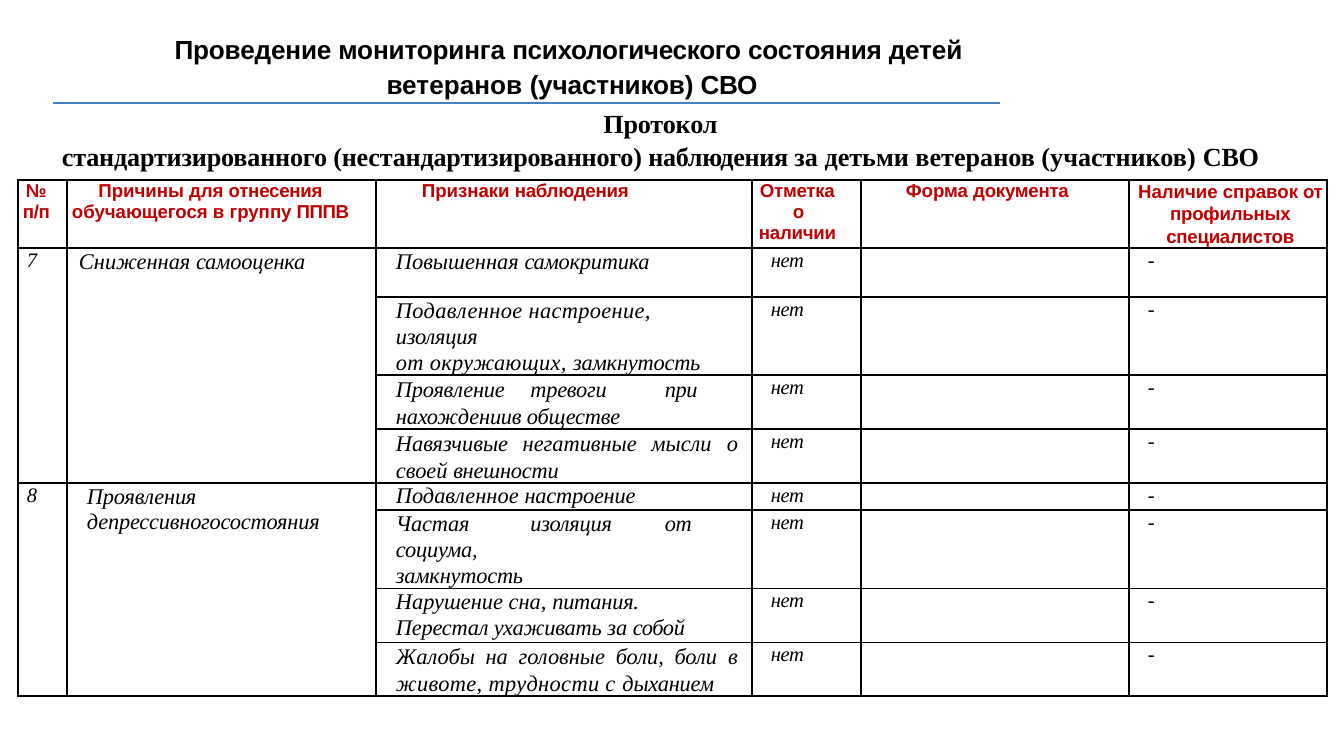
from dataclasses import dataclass
from itertools import accumulate
from typing import NamedTuple

from lxml.etree import SubElement
from pptx import Presentation
from pptx.dml.color import RGBColor
from pptx.enum.shapes import MSO_CONNECTOR
from pptx.enum.text import MSO_ANCHOR, MSO_AUTO_SIZE, PP_ALIGN
from pptx.oxml.ns import qn
from pptx.util import Emu, Pt

COLORS = {"text": "000000", "header": "C00000", "rule": "4480C2", "border": "000000"}
CENTER, JUSTIFY = PP_ALIGN.CENTER, PP_ALIGN.JUSTIFY


class Style(NamedTuple):
    font: str
    size: int
    color: str
    bold: bool = False
    italic: bool = False


TITLE = Style("Arial", 14, "text", bold=True)
SUBTITLE = Style("Times New Roman", 14, "text", bold=True)
HEADER = Style("Arial", 10, "header", bold=True)
REASON = Style("Times New Roman", 12, "text", italic=True)
MARK = Style("Times New Roman", 11, "text", italic=True)


@dataclass
class Para:
    """Runs are (text, letter spacing in points); indents and tabs are px."""
    runs: list[tuple[str, float]]
    style: Style
    left: int = 0
    first: int = 0
    right: int = 0
    line: float | None = None
    before: float = 0
    align: PP_ALIGN | None = None
    tabs: tuple[int, ...] = ()


def px(value: int) -> Emu:
    return Emu(round(value * 914400 / 134.4))


def rgb(name: str) -> RGBColor:
    return RGBColor.from_string(COLORS[name])


def write(frame, paras: list[Para]) -> None:
    for number, para in enumerate(paras):
        target = frame.add_paragraph() if number else frame.paragraphs[0]
        target.alignment = para.align
        target.space_before = Pt(para.before)
        if para.line:
            target.line_spacing = Pt(para.line)
        properties = target._p.get_or_add_pPr()
        for key, value in (("marL", para.left), ("marR", para.right), ("indent", para.first)):
            properties.set(key, str(px(value)))
        if para.tabs:
            stops = SubElement(properties, qn("a:tabLst"))
            for stop in para.tabs:
                SubElement(stops, qn("a:tab"), pos=str(px(stop)), algn="l")
        for text, spacing in para.runs:
            run = target.add_run()
            run.text = text
            font = run.font
            font.name, font.size = para.style.font, Pt(para.style.size)
            font.bold, font.italic = para.style.bold, para.style.italic
            font.color.rgb = rgb(para.style.color)
            run._r.get_or_add_rPr().set("spc", str(round(spacing * 100)))


def write_box(shape, box: tuple[int, int, int, int], paras: list[Para]) -> None:
    shape.left, shape.top, shape.width, shape.height = map(px, box)
    frame = shape.text_frame
    frame.word_wrap, frame.auto_size = True, MSO_AUTO_SIZE.NONE
    frame.vertical_anchor = MSO_ANCHOR.TOP
    frame.margin_left = frame.margin_right = frame.margin_bottom = 0
    frame.margin_top = px(1)
    write(frame, paras)


def format_cell(cell) -> None:
    cell.margin_left = cell.margin_right = cell.margin_top = cell.margin_bottom = 0
    properties = cell._tc.get_or_add_tcPr()
    for side in ("lnL", "lnR", "lnT", "lnB"):
        edge = SubElement(properties, qn(f"a:{side}"), w=str(Pt(1)))
        fill = SubElement(edge, qn("a:solidFill"))
        SubElement(fill, qn("a:srgbClr"), val=COLORS["border"])
    cell.fill.background()
    # Keeps cells without text from stretching their row
    if not cell.text_frame.text:
        SubElement(cell.text_frame.paragraphs[0]._p, qn("a:endParaRPr"), sz="1000")


def sign(runs: list[tuple[str, float]], line: float = 14.1, **options) -> Para:
    return Para(runs, REASON, left=20, right=15, line=line, **options)


def mark(text: str, left: int = 19) -> Para:
    return Para([(text, -0.2)], MARK, left=left, line=12.9)


# Table content
HEADERS = [
    [Para([("№", -0.5)], HEADER, left=8, line=11.8), Para([("п/п", -0.2)], HEADER, left=5)],
    [Para([("Причины для ", 0), ("отнесения", -0.1)], HEADER, right=22, line=11.8, align=CENTER),
     Para([("обучающегося в группу ", 0), ("ПППВ", -0.2)], HEADER, right=22, align=CENTER)],
    [Para([("Признаки ", 0), ("наблюдения", -0.1)], HEADER, left=46, line=11.8)],
    [Para([("Отметка", -0.1)], HEADER, left=8, line=11.8),
     Para([("о ", -0.5), ("наличии", -0.1)], HEADER, left=7, first=34)],
    [Para([("Форма ", 0), ("документа", -0.1)], HEADER, left=45, line=11.8)],
    [Para([("Наличие справок ", 0), ("от ", -0.2), ("профильных специалистов", -0.1)],
          HEADER, left=5, line=12, align=CENTER)],
]
REASONS = [
    ("7", [Para([("Сниженная ", 0), ("самооценка", -0.1)], REASON, left=12, line=14.1)]),
    ("8", [Para([("Проявления", -0.1)], REASON, left=20, line=14.1),
           Para([("депрессивногосостояния", -0.1)], REASON, left=20)]),
]
SIGNS = [
    [sign([("Повышенная ", 0), ("самокритика", -0.1)])],
    [sign([("Подавленное настроение, ", 0.2), ("изоляция", -0.1)]),
     sign([("от окружающих, ", 0.2), ("замкнутость", -0.1)], 13.7)],
    [sign([("Проявление\tтревоги\t", -0.1), ("при ", -0.2), ("нахождениив обществе", -0.1)],
          14.4, tabs=(192, 332))],
    [sign([("Навязчивые негативные мысли ", 0), ("о ", -0.5), ("своей ", 0),
           ("внешности", -0.1)], 14.4, align=JUSTIFY)],
    [sign([("Подавленное ", 0), ("настроение", -0.1)], 13.8)],
    [sign([("Частая\tизоляция\t", -0.1), ("от\t", -0.2), ("социума,", -0.1)],
          tabs=(120, 228, 281)),
     sign([("замкнутость", -0.1)], 13.7)],
    [sign([("Нарушение сна, ", 0), ("питания.", -0.1)], 14.2),
     sign([("Перестал ухаживать ", -0.1), ("за ", 0), ("собой", -0.2)], 13.7)],
    [sign([("Жалобы на головные боли, боли ", 0), ("в ", -0.5), ("животе, трудности с ", 0.2),
           ("дыханием", -0.1)], 14.4, align=JUSTIFY)],
]
COLUMNS = [49, 309, 376, 109, 268, 198]
ROWS = [68, 49, 54, 54, 54, 27, 78, 54, 54]
SIGNS_PER_REASON = 4


def build_protocol(slide) -> None:
    table = slide.shapes.add_table(len(ROWS), len(COLUMNS), px(18), px(180),
                                   px(sum(COLUMNS)), px(sum(ROWS))).table
    table.first_row = table.horz_banding = False
    # Sizes come from rounded edges so that the grid does not drift
    for lines, sizes, side in ((table.columns, COLUMNS, "width"), (table.rows, ROWS, "height")):
        edges = [0, *accumulate(sizes)]
        for line, start, end in zip(lines, edges, edges[1:]):
            setattr(line, side, px(end) - px(start))

    for column, paras in enumerate(HEADERS):
        write(table.cell(0, column).text_frame, paras)
    for index, (number, reason) in enumerate(REASONS):
        top = 1 + index * SIGNS_PER_REASON
        for column, paras in enumerate(([mark(number, left=9)], reason)):
            cell = table.cell(top, column)
            cell.merge(table.cell(top + SIGNS_PER_REASON - 1, column))
            write(cell.text_frame, paras)
    for row, paras in enumerate(SIGNS, start=1):
        for column, content in ((2, paras), (3, [mark("нет")]), (5, [mark("-")])):
            write(table.cell(row, column).text_frame, content)
    for cell in table.iter_cells():
        format_cell(cell)


def main() -> None:
    deck = Presentation()
    deck.slide_width, deck.slide_height = px(1344), px(756)
    slide = deck.slides.add_slide(deck.slide_layouts[5])

    # Title and the rule under it
    write_box(slide.shapes.title, (79, 32, 985, 67), [
        Para([("Проведение мониторинга ", -0.1), ("психологического ", -0.2),
              ("состояния детей ", -0.1)], TITLE, left=1, before=1.1, align=CENTER),
        Para([("ветеранов ", 0), ("(участников) ", -0.1), ("СВО", -0.2)],
             TITLE, left=1, before=2, align=CENTER),
    ])
    rule = slide.shapes.add_connector(MSO_CONNECTOR.STRAIGHT, px(53), px(103), px(1000), px(103))
    rule.line.color.rgb, rule.line.width = rgb("rule"), Pt(1.5)
    SubElement(rule._element.spPr, qn("a:effectLst"))

    # Protocol heading
    write_box(slide.shapes.add_textbox(0, 0, 0, 0), (54, 106, 1213, 67), [
        Para([("Протокол", -0.1)], SUBTITLE, before=1.1, align=CENTER),
        Para([("стандартизированного (нестандартизированного) ", -0.1), ("наблюдения ", -0.2),
              ("за детьми ветеранов (участников) ", 0), ("СВО", -0.2)],
             SUBTITLE, before=1.1, align=CENTER),
    ])

    build_protocol(slide)
    deck.save("out.pptx")


if __name__ == "__main__":
    main()
